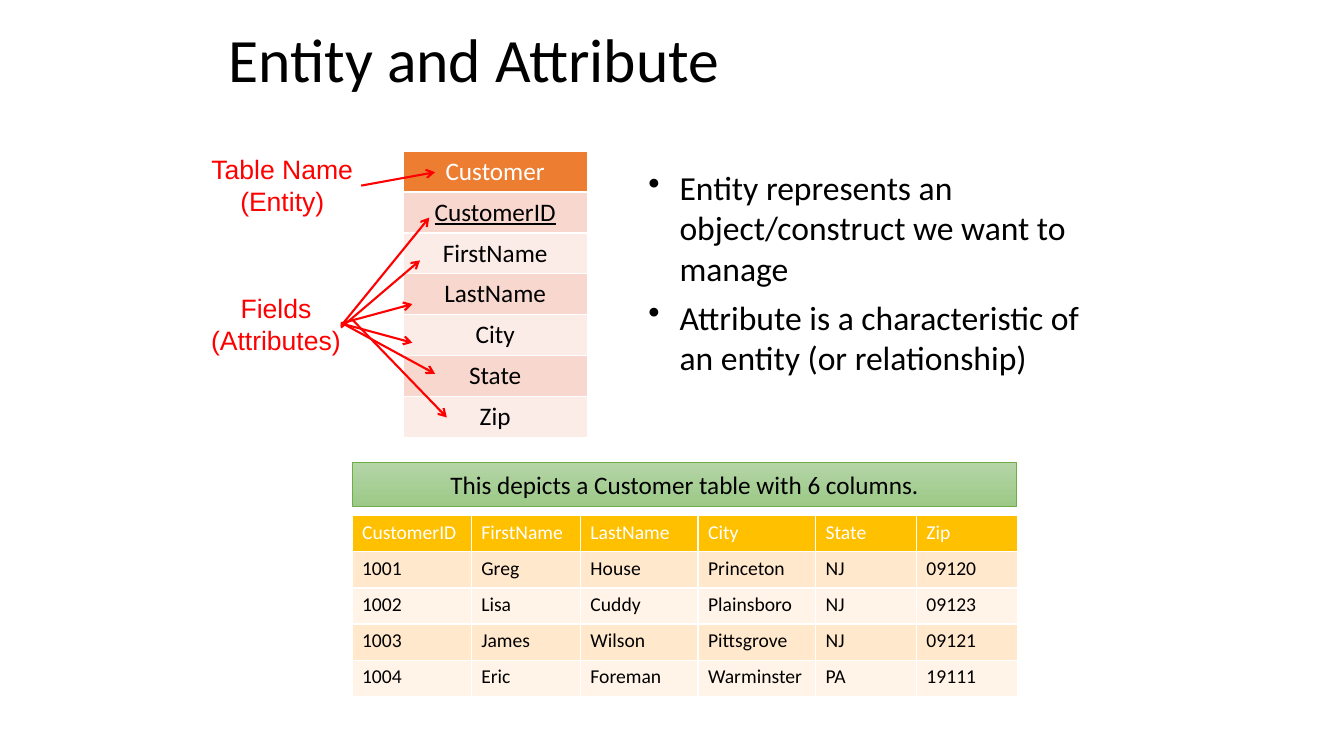
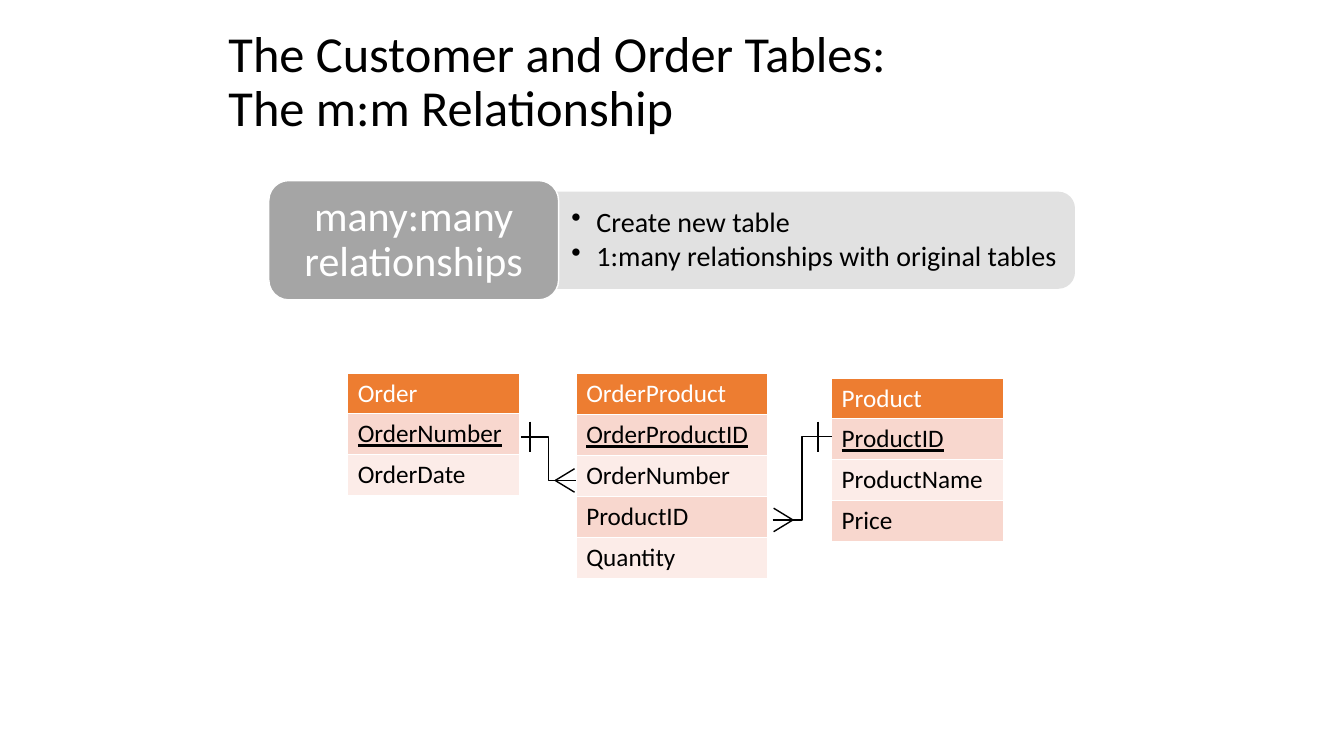
import lxml.etree
import pptx
import pptx.dml.color
import pptx.enum.shapes
import pptx.enum.text
import pptx.oxml.ns
import pptx.util

BLACK, WHITE, RED = "000000", "FFFFFF", "FF0000"
ORANGE = ("ED7D31", "F8D7CE", "FCECE8")  # header, odd rows, even rows
GOLD = ("FFC000", "FFE8CC", "FFF4E7")
SHAPE = pptx.enum.shapes.MSO_SHAPE
LINK = pptx.enum.shapes.MSO_CONNECTOR
LEFT, CENTER = pptx.enum.text.PP_ALIGN.LEFT, pptx.enum.text.PP_ALIGN.CENTER
MIDDLE = pptx.enum.text.MSO_ANCHOR.MIDDLE
qn = pptx.oxml.ns.qn


def paint(item, color):
    """Give a shape, cell, line or font a solid colour."""
    item.fill.solid()
    item.fill.fore_color.rgb = pptx.dml.color.RGBColor.from_string(color)


def write(frame, lines, size, color=BLACK, align=LEFT, face="Calibri",
          indent=0, after=0, lead=1.0):
    """Fill a frame, one paragraph a line; an indent in inches adds bullets."""
    for i, line in enumerate(lines):
        para = frame.add_paragraph() if i else frame.paragraphs[0]
        para.text = line
        para.alignment = align
        para.line_spacing = lead
        para.space_before = pptx.util.Pt(0)
        para.space_after = pptx.util.Pt(after)
        if indent:
            props = para._p.get_or_add_pPr()
            props.set("marL", str(pptx.util.Inches(indent)))
            props.set("indent", str(-pptx.util.Inches(indent)))
            lxml.etree.SubElement(props, qn("a:buChar")).set("char", "•")
        para.font.name = face
        para.font.size = pptx.util.Pt(size)
        para.font.bold = False
        paint(para.font, color)


# The slide is a grid of 160 columns by 90 rows of square cells.
deck = pptx.Presentation()
deck.slide_height = pptx.util.Inches(7.5)
cell = deck.slide_height // 90
deck.slide_width = 160 * cell

# Titles
slides = []
for text, size, top in [
    ("Entity and Attribute", 44, 0),
    ("The Customer and Order Tables:\vThe m:m Relationship", 36, 2.4),
]:
    slide = deck.slides.add_slide(deck.slide_layouts[5])
    title = slide.shapes.title
    title.left, title.top, title.width, title.height = [
        round(n * cell) for n in (26, top, 108, 15)]
    title.text_frame.auto_size = pptx.enum.text.MSO_AUTO_SIZE.NONE
    title.text_frame.vertical_anchor = MIDDLE
    write(title.text_frame, [text], size, lead=0.9)
    slides.append(slide.shapes)
entity, orders = slides

# Tables: left, top, column widths, row height, palette, size, alignment, rows
people = [
    ("CustomerID", "FirstName", "LastName", "City", "State", "Zip"),
    ("1001", "Greg", "House", "Princeton", "NJ", "09120"),
    ("1002", "Lisa", "Cuddy", "Plainsboro", "NJ", "09123"),
    ("1003", "James", "Wilson", "Pittsgrove", "NJ", "09121"),
    ("1004", "Eric", "Foreman", "Warminster", "PA", "19111"),
]
fields = [("Customer",)] + [(name,) for name in people[0]]
order = [("Order",), ("OrderNumber",), ("OrderDate",)]
joint = [("OrderProduct",), ("OrderProductID",), ("OrderNumber",),
         ("ProductID",), ("Quantity",)]
product = [("Product",), ("ProductID",), ("ProductName",), ("Price",)]
for shapes, left, top, widths, high, tones, size, align, rows in [
    (entity, 48, 18, [21.9], 4.8, ORANGE, 18, CENTER, fields),
    (entity, 41.9, 61.4, [14.2, 13, 14, 14, 12, 12], 4.3, GOLD, 14, LEFT, people),
    (orders, 41.4, 44.4, [20.5], 4.8, ORANGE, 18, LEFT, order),
    (orders, 68.6, 44.5, [22.8], 4.87, ORANGE, 18, LEFT, joint),
    (orders, 99, 45, [20.5], 4.87, ORANGE, 18, LEFT, product),
]:
    box = [round(n * cell) for n in (left, top, sum(widths), high * len(rows))]
    table = shapes.add_table(len(rows), len(widths), *box).table
    for col, width in zip(table.columns, widths):
        col.width = round(width * cell)
    for r, row in enumerate(rows):
        table.rows[r].height = round(high * cell)
        tone = tones[0] if r == 0 else tones[2 - r % 2]
        for c, text in enumerate(row):
            spot = table.cell(r, c)
            paint(spot, tone)
            write(spot.text_frame, [text], size, BLACK if r else WHITE, align)
            if r == 1 and len(row) == 1:  # primary key
                spot.text_frame.paragraphs[0].font.underline = True

# Bullets and red labels
body = entity.add_textbox(*[round(n * cell) for n in (76, 19.3, 54, 26.4)])
body.text_frame.word_wrap = True
write(body.text_frame, [
    "Entity represents an object/construct we want to manage",
    "Attribute is a characteristic of an entity (or relationship)",
], 24, indent=0.31, after=6)
for top, width, lines in [
    (18.2, 17.2, ["Table Name", "(Entity)"]),
    (34.8, 15.7, ["Fields", "(Attributes)"]),
]:
    label = entity.add_textbox(*[round(n * cell) for n in (25, top, width, 7.7)])
    frame = label.text_frame
    frame.word_wrap = False
    frame.margin_left = frame.margin_right = 0
    frame.margin_top = frame.margin_bottom = 0
    write(frame, lines, 19, RED, CENTER, "Arial")

# Banner and the two relationship panels
panels = []
for shapes, kind, box, fill, edge, weight in [
    (entity, SHAPE.RECTANGLE, (42, 55, 79, 5.3), "AACE9A", "70AD47", 0.5),
    (orders, SHAPE.ROUNDED_RECTANGLE, (62.9, 22.9, 65, 11.4), "E1E1E1", "E1E1E1", 1),
    (orders, SHAPE.ROUNDED_RECTANGLE, (32, 21.5, 34.5, 14.2), "A5A5A5", WHITE, 1),
]:
    panel = shapes.add_shape(kind, *[round(n * cell) for n in box])
    panel.shadow.inherit = False
    paint(panel, fill)
    paint(panel.line, edge)
    panel.line.width = pptx.util.Pt(weight)
    panel.text_frame.word_wrap = True
    panel.text_frame.vertical_anchor = MIDDLE
    panels.append(panel)
banner, detail, kind = panels

banner.fill.gradient()
banner.fill.gradient_angle = 270
for stop, color in zip(banner.fill.gradient_stops, ("B5D5A7", "9CC987")):
    stop.color.rgb = pptx.dml.color.RGBColor.from_string(color)
write(banner.text_frame, ["This depicts a Customer table with 6 columns."],
      18, align=CENTER)
detail.text_frame.margin_left = pptx.util.Inches(0.38)
write(detail.text_frame,
      ["Create new table", "1:many relationships with original tables"],
      20, indent=0.25, after=3, lead=0.9)
write(kind.text_frame, ["many:many relationships"], 30, WHITE, CENTER, lead=0.9)

# Red arrows, then elbows, "one" bars and "many" feet
arrows = [
    (43, 22.1, 51.8, 20.5),
    (40.6, 38.8, 51.1, 25.9),
    (40.6, 39, 50, 31),
    (40.6, 38.5, 49.1, 36.2),
    (40.6, 38.5, 49.1, 40.8),
    (40.6, 38.4, 51.8, 44.5),
    (41.9, 38, 53.2, 49.7),
]
elbows = [(62, 52, 68.6, 57.2), (92, 61.9, 99, 52)]
bars = [(x, 50.2, x, 53.8) for x in (63.1, 97.4)]
feet = [(x, y + rise, tip, y)
        for x, tip, y in ((68.4, 66.1, 57.2), (92.1, 94.4, 61.9))
        for rise in (-1.4, 1.4)]
for shapes, form, color, weight, ends in [
    (entity, LINK.STRAIGHT, RED, 1.5, arrows),
    (orders, LINK.ELBOW, BLACK, 1, elbows),
    (orders, LINK.STRAIGHT, BLACK, 1, bars + feet),
]:
    for end in ends:
        link = shapes.add_connector(form, *[round(n * cell) for n in end])
        paint(link.line, color)
        link.line.width = pptx.util.Pt(weight)
        if color == RED:
            head = lxml.etree.SubElement(link.line._get_or_add_ln(), qn("a:tailEnd"))
            head.set("type", "arrow")
        lxml.etree.SubElement(link._element.spPr, qn("a:effectLst"))

deck.save("out.pptx")
